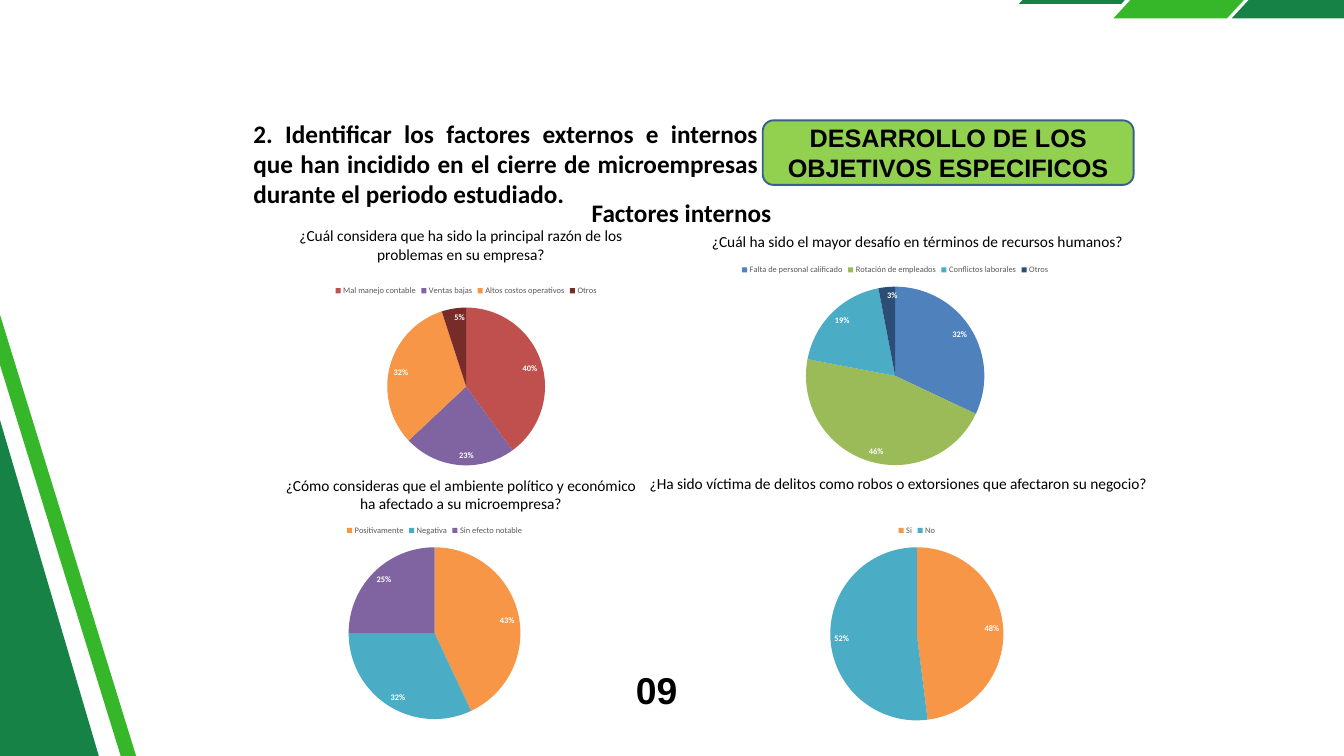
from dataclasses import dataclass

from pptx import Presentation
from pptx.chart.data import CategoryChartData
from pptx.dml.color import RGBColor
from pptx.enum.chart import XL_CHART_TYPE as ChartType
from pptx.enum.chart import XL_LABEL_POSITION as LabelPos
from pptx.enum.chart import XL_LEGEND_POSITION as LegendPos
from pptx.enum.shapes import MSO_SHAPE as Shape
from pptx.enum.text import MSO_ANCHOR as Anchor
from pptx.enum.text import MSO_AUTO_SIZE as AutoSize
from pptx.enum.text import PP_ALIGN as Align
from pptx.util import Cm, Pt


@dataclass(frozen=True)
class Theme:
    head_font: str = "Arial"
    body_font: str = "Calibri"
    black: str = "000000"
    white: str = "FFFFFF"
    gray: str = "595959"
    dark_green: str = "168246"
    green: str = "35B729"
    lime: str = "92D050"
    border: str = "3A5F8C"
    blue: str = "4F81BD"
    navy: str = "2C4D75"
    red: str = "C0504D"
    maroon: str = "772C2A"
    olive: str = "9BBB59"
    purple: str = "8064A2"
    teal: str = "4BACC6"
    orange: str = "F79646"
    number_size: float = 40
    heading_size: float = 27
    question_size: float = 16.5
    chart_size: float = 10
    label_size: float = 9


def rgb(value):
    return RGBColor.from_string(value)


class SlideBuilder:
    def __init__(self, slide, theme):
        self.slide = slide
        self.shapes = slide.shapes
        self.theme = theme

    def style_font(self, font, size, color, bold=False, name=None):
        font.name = name or self.theme.body_font
        font.size = Pt(size)
        font.bold = bold
        font.color.rgb = rgb(color)

    def fill_text(self, sp, text, size, align, bold=False, name=None, anchor=Anchor.TOP):
        tf = sp.text_frame
        tf.word_wrap = True
        tf.auto_size = AutoSize.NONE
        tf.vertical_anchor = anchor
        p = tf.paragraphs[0]
        p.alignment = align
        r = p.add_run()
        r.text = text
        self.style_font(r.font, size, self.theme.black, bold, name)
        return p

    def polygon(self, points, color):
        corners = [(Cm(x), Cm(y)) for x, y in points]
        builder = self.shapes.build_freeform(*corners[0])
        builder.add_line_segments(corners[1:], close=True)
        sp = builder.convert_to_shape()
        sp.shadow.inherit = False
        sp.fill.solid()
        sp.fill.fore_color.rgb = rgb(color)
        sp.line.fill.background()

    def slanted_bar(self, left, top, bottom, edge, slant, color):
        self.polygon([(left + slant, top), (left + slant + edge, top),
                      (left + edge, bottom), (left, bottom)], color)

    def title(self, box, text):
        sp = self.shapes.title
        sp.left, sp.top, sp.width, sp.height = map(Cm, box)
        self.fill_text(sp, text, self.theme.heading_size, Align.JUSTIFY, bold=True)

    def text(self, box, text, size, bold=False):
        sp = self.shapes.add_textbox(*map(Cm, box))
        self.fill_text(sp, text, size, Align.CENTER, bold)

    def page_number(self, box, text):
        sp = self.shapes.add_textbox(*map(Cm, box))
        p = self.fill_text(sp, text, self.theme.number_size, Align.RIGHT,
                           bold=True, name=self.theme.head_font)
        p.line_spacing = Pt(39.2)
        tf = sp.text_frame
        tf.margin_left = tf.margin_top = tf.margin_right = tf.margin_bottom = 0

    def badge(self, box, text):
        sp = self.shapes.add_shape(Shape.ROUNDED_RECTANGLE, *map(Cm, box))
        sp.shadow.inherit = False
        sp.fill.solid()
        sp.fill.fore_color.rgb = rgb(self.theme.lime)
        sp.line.color.rgb = rgb(self.theme.border)
        sp.line.width = Pt(2)
        self.fill_text(sp, text, self.theme.heading_size, Align.CENTER, bold=True,
                       name=self.theme.head_font, anchor=Anchor.MIDDLE)

    def pie(self, box, slices):
        t = self.theme
        data = CategoryChartData()
        data.categories = [name for name, _, _ in slices]
        data.add_series("Respuestas", [value for _, value, _ in slices])
        chart = self.shapes.add_chart(ChartType.PIE, *map(Cm, box), data).chart
        chart.has_title = False
        self.style_font(chart.font, t.chart_size, t.black)

        chart.has_legend = True
        chart.legend.position = LegendPos.TOP
        chart.legend.include_in_layout = False
        self.style_font(chart.legend.font, t.label_size, t.gray)

        plot = chart.plots[0]
        plot.vary_by_categories = True
        for i, (_, _, color) in enumerate(slices):
            fill = plot.series[0].points[i].format.fill
            fill.solid()
            fill.fore_color.rgb = rgb(color)

        plot.has_data_labels = True
        labels = plot.data_labels
        labels.show_percentage = True
        labels.show_value = False
        labels.number_format = "0%"
        labels.number_format_is_linked = False
        labels.position = LabelPos.INSIDE_END
        self.style_font(labels.font, t.label_size, t.white, bold=True)


def main():
    t = Theme()
    prs = Presentation()
    prs.slide_width, prs.slide_height = Cm(50.8), Cm(28.575)
    s = SlideBuilder(prs.slides.add_slide(prs.slide_layouts[5]), t)

    # Green bars at the top right and bands at the lower left
    s.slanted_bar(38.51, -2.18, 0.15, 3.87, 2.15, t.dark_green)
    for left, color in ((42.09, t.green), (46.56, t.dark_green)):
        s.slanted_bar(left, -2.69, 0.69, 4.29, 3.12, color)
    s.polygon([(-5, 43.99), (-16.76, 3.99), (-4.55, 0.41), (7.21, 40.39)], t.dark_green)
    s.polygon([(8.74, 42.11), (-3.56, 2.26), (-3.02, 2.11), (9.27, 41.94)], t.green)

    # Headings and page number
    s.page_number((22.25, 25.53, 3.35, 1.4), "09")
    s.badge((28.83, 4.55, 14.02, 2.44), "DESARROLLO DE LOS OBJETIVOS ESPECIFICOS")
    s.title((9.32, 4.34, 19.58, 3.71),
            "2. Identificar los factores externos e internos que han incidido "
            "en el cierre de microempresas durante el periodo estudiado.")
    s.text((14.99, 7.32, 21.54, 1.42), "Factores internos", t.heading_size, bold=True)

    # Survey questions, each with its pie chart
    questions = [
        ("¿Cuál considera que ha sido la principal razón de los problemas en su empresa?",
         (10.41, 8.43, 14.02, 1.68), (8.97, 10.52, 17.3, 7.42),
         [("Mal manejo contable", 40, t.red), ("Ventas bajas", 23, t.purple),
          ("Altos costos operativos", 32, t.orange), ("Otros", 5, t.maroon)]),
        ("¿Cuál ha sido el mayor desafío en términos de recursos humanos?",
         (25.88, 8.66, 17.58, 0.97), (23.93, 9.73, 19.81, 8.2),
         [("Falta de personal calificado", 32, t.blue), ("Rotación de empleados", 46, t.olive),
          ("Conflictos laborales", 19, t.teal), ("Otros", 3, t.navy)]),
        ("¿Cómo consideras que el ambiente político y económico ha afectado a su microempresa?",
         (10.41, 17.86, 14.02, 1.68), (6.58, 19.58, 19.69, 7.95),
         [("Positivamente", 43, t.orange), ("Negativa", 32, t.teal),
          ("Sin efecto notable", 25, t.purple)]),
        ("¿Ha sido víctima de delitos como robos o extorsiones que afectaron su negocio?",
         (24.16, 17.81, 19.58, 0.97), (22.96, 19.58, 23.39, 8),
         [("Si", 48, t.orange), ("No", 52, t.teal)]),
    ]
    for question, text_box, chart_box, slices in questions:
        s.text(text_box, question, t.question_size)
        s.pie(chart_box, slices)

    prs.save("out.pptx")


if __name__ == "__main__":
    main()
